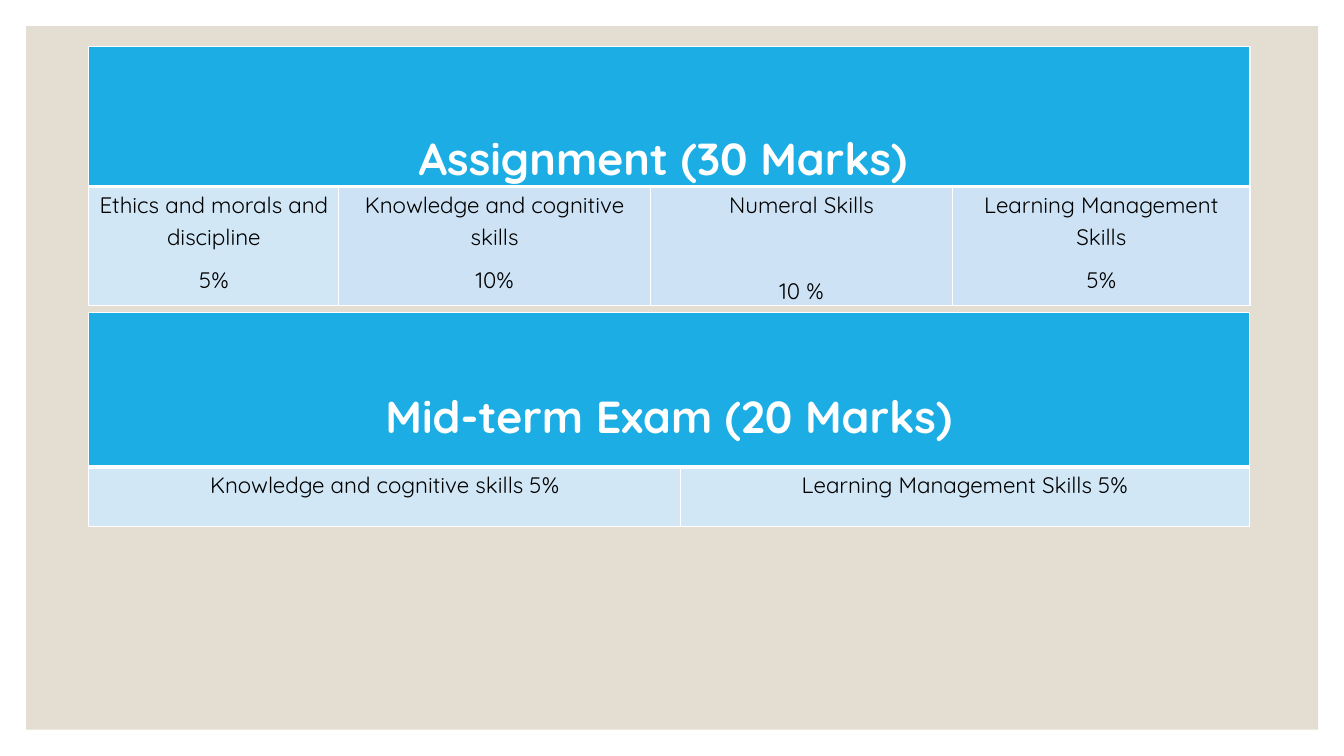
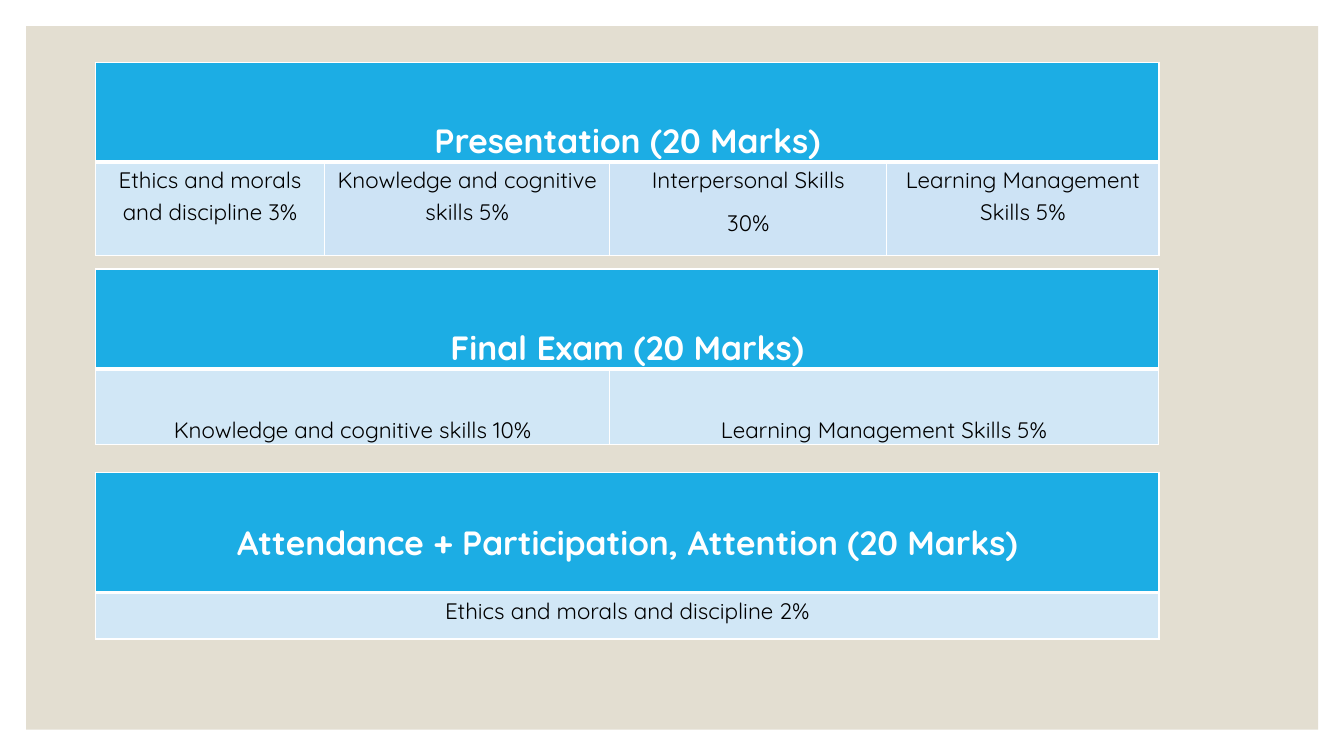
"""Build two slides of tables that show how course marks are divided."""
import pptx
import pptx.util
import pptx.dml.color
import pptx.enum.shapes
import pptx.enum.text
import pptx.oxml
import pptx.oxml.ns

Cm, Pt = pptx.util.Cm, pptx.util.Pt

FONT = "Quicksand"
WHITE, BLACK, SAND = "FFFFFF", "000000", "E3DED1"
HEADING_FILL, PALE_FILL, SOFT_FILL = "1CADE4", "D1E7F6", "CDE3F5"
BODY_SIZE = 16
LINE_SPACING, SPACE_AFTER = 1.15, 8
FONT_LINE_HEIGHT = 1.25
THIN, THICK = 1, 3

ASSESSMENTS = [
    {"left": 2.24, "heading_size": 32, "tables": [
        {"top": 1.17, "columns": [6.3, 7.85, 7.62, 7.49], "rows": [3.53, 3],
         "heading": "Assignment (30 Marks) ", "lead_size": 32,
         "skills": [["Ethics and morals and discipline", "5%"],
                    ["Knowledge and cognitive skills", "10%"],
                    ["Numeral Skills", "", "10 %"],
                    ["Learning Management Skills", "5%"]]},
        {"top": 7.87, "columns": [14.91, 14.33], "rows": [3.89, 1.5],
         "heading": "Mid-term Exam (20 Marks)", "lead_size": 28,
         "skills": [["Knowledge and cognitive skills 5%"],
                    ["Learning Management Skills 5%"]]},
    ]},
    {"left": 2.41, "heading_size": 24, "tables": [
        {"top": 1.57, "columns": [5.77, 7.19, 6.98, 6.86], "rows": [2.51, 2.36],
         "heading": "Presentation (20 Marks)", "lead_size": 20,
         "skills": [["Ethics and morals and discipline 3%"],
                    ["Knowledge and cognitive skills 5%"],
                    ["Interpersonal Skills", "30%"],
                    ["Learning Management Skills 5%"]]},
        {"top": 6.78, "columns": [12.95, 13.84], "rows": [2.51, 1.9],
         "heading": "Final Exam (20 Marks)", "lead_size": 20,
         "skills": [["", "Knowledge and cognitive skills 10%"],
                    ["", "Learning Management Skills 5%"]]},
        {"top": 11.91, "columns": [26.8], "rows": [3.02, 1.17],
         "heading": "Attendance + Participation, Attention (20 Marks)", "lead_size": 16,
         "skills": [["Ethics and morals and discipline 2%"]]},
    ]},
]


def rgb(value):
    return pptx.dml.color.RGBColor.from_string(value)


def lead_height(size):
    return Pt(size * FONT_LINE_HEIGHT * LINE_SPACING + SPACE_AFTER)


def set_borders(cell, top, bottom):
    properties = cell._tc.get_or_add_tcPr()
    for side, width in (("L", THIN), ("R", THIN), ("T", top), ("B", bottom)):
        properties.append(pptx.oxml.parse_xml(
            f'<a:ln{side} {pptx.oxml.ns.nsdecls("a")} w="{Pt(width)}"><a:solidFill>'
            f'<a:srgbClr val="{WHITE}"/></a:solidFill></a:ln{side}>'))


def style_cell(cell, fill, top, bottom):
    set_borders(cell, top, bottom)
    cell.fill.solid()
    cell.fill.fore_color.rgb = rgb(fill)
    cell.margin_left = cell.margin_right = Cm(0.18)
    cell.margin_top = cell.margin_bottom = 0


def write_cell(cell, lines, size, color, bold, lead_size):
    """Write the lines, turning each empty one into space above the next."""
    frame = cell.text_frame
    gap, started = 0, False
    for line in lines:
        if not line:
            gap = lead_height(lead_size)
            continue
        paragraph = frame.add_paragraph() if started else frame.paragraphs[0]
        if started:
            paragraph.space_before = gap
        else:
            cell.margin_top = gap
        gap, started = 0, True
        paragraph.text = line
        paragraph.alignment = pptx.enum.text.PP_ALIGN.CENTER
        paragraph.line_spacing = LINE_SPACING
        paragraph.space_after = Pt(SPACE_AFTER)
        font = paragraph.font
        font.name, font.size, font.bold = FONT, Pt(size), bold
        font.color.rgb = rgb(color)


def add_marks_table(slide, left, heading_size, marks):
    columns, rows = marks["columns"], marks["rows"]
    table = slide.shapes.add_table(
        len(rows), len(columns), Cm(left), Cm(marks["top"]),
        Cm(sum(columns)), Cm(sum(rows))).table
    table.first_row = table.horz_banding = False
    for column, width in zip(table.columns, columns):
        column.width = Cm(width)
    for row, height in zip(table.rows, rows):
        row.height = Cm(height)

    for index, skill in enumerate(marks["skills"]):
        style_cell(table.cell(0, index), HEADING_FILL, THIN, THICK)
        body = table.cell(1, index)
        soft = index > 0 and len(columns) > 2
        style_cell(body, SOFT_FILL if soft else PALE_FILL, THICK, THIN)
        write_cell(body, skill, BODY_SIZE, BLACK, False, BODY_SIZE)

    heading = table.cell(0, 0)
    if len(columns) > 1:
        heading.merge(table.cell(0, len(columns) - 1))
    write_cell(heading, ["", marks["heading"]], heading_size, WHITE, True,
               marks["lead_size"])


def prepare_layout(deck):
    """Put the sand panel on the blank layout, so that every slide shows it."""
    layout = deck.slide_layouts[6]
    for placeholder in list(layout.placeholders):
        placeholder.element.getparent().remove(placeholder.element)
    slide = deck.slides.add_slide(layout)
    panel = slide.shapes.add_shape(
        pptx.enum.shapes.MSO_SHAPE.RECTANGLE, Cm(0.66), Cm(0.66), Cm(32.56), Cm(17.73))
    panel.shadow.inherit = False
    panel.fill.solid()
    panel.fill.fore_color.rgb = rgb(SAND)
    panel.line.fill.background()
    layout.shapes.element.append(panel.element)
    return layout, slide


def main():
    deck = pptx.Presentation()
    deck.slide_width, deck.slide_height = Cm(33.87), Cm(19.05)
    layout, first_slide = prepare_layout(deck)
    for number, assessment in enumerate(ASSESSMENTS):
        slide = deck.slides.add_slide(layout) if number else first_slide
        for marks in assessment["tables"]:
            add_marks_table(slide, assessment["left"], assessment["heading_size"], marks)
    deck.save("out.pptx")


if __name__ == "__main__":
    main()
